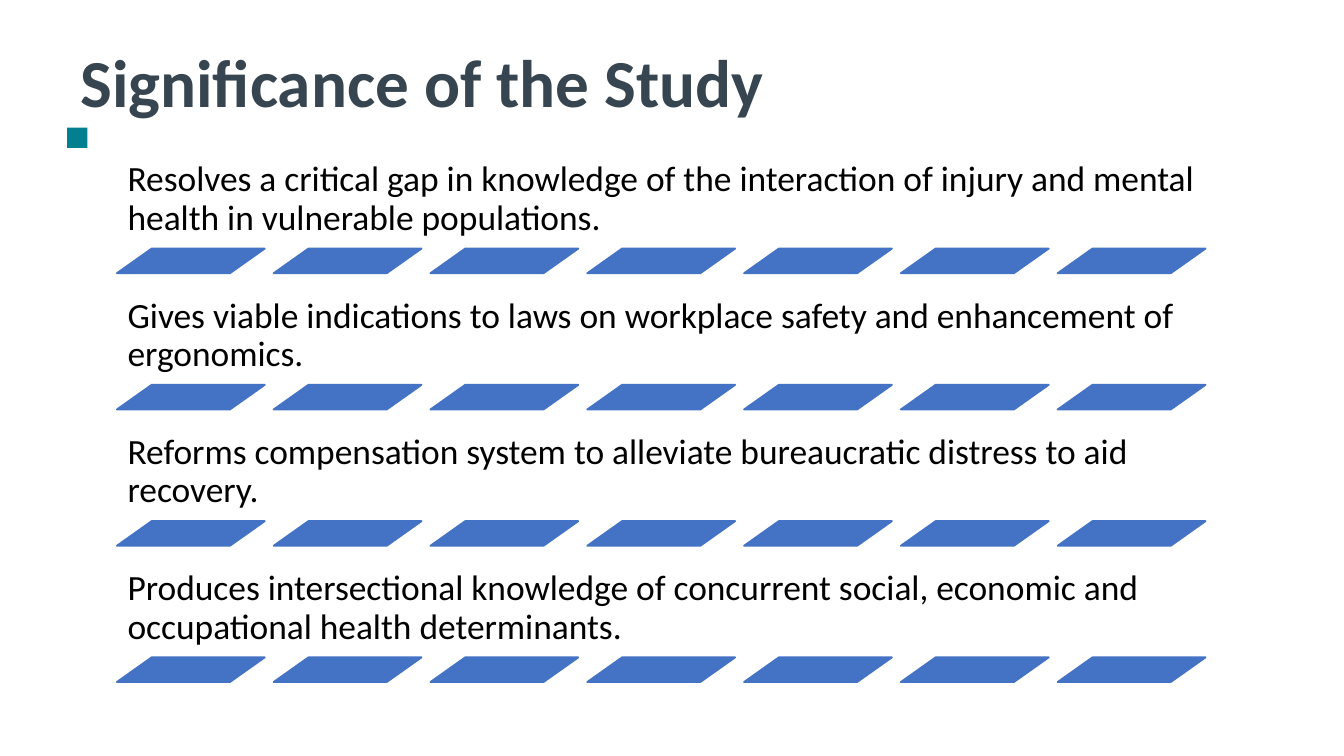
import pptx
import pptx.dml.color
import pptx.enum.shapes
import pptx.enum.text
import pptx.util

Pt = pptx.util.Pt
SHAPES = pptx.enum.shapes.MSO_SHAPE
ANCHORS = pptx.enum.text.MSO_ANCHOR

STATEMENTS = [
    "Resolves a critical gap in knowledge of the interaction of injury and mental health in vulnerable populations.",
    "Gives viable indications to laws on workplace safety and enhancement of ergonomics.",
    "Reforms compensation system to alleviate bureaucratic distress to aid recovery.",
    "Produces intersectional knowledge of concurrent social, economic and occupational health determinants.",
]
LIST_LEFT = 62.64
LIST_TOP = 79.1
LIST_WIDTH = 594.7
STATEMENT_HEIGHT = 54.1
ROW_PITCH = 73
BAR_COUNT = 7
BAR_PITCH = 84
BAR_WIDTH = 79.2
BAR_HEIGHT = 13.2


def color(hex_string):
    """Return the colour for a hex string."""
    return pptx.dml.color.RGBColor.from_string(hex_string)


def add_text(shapes, text, box, size, hex_string, anchor, inset=7.2, bold=False):
    """Add a wrapped one-paragraph text box and return its paragraph."""
    frame = shapes.add_textbox(*map(Pt, box)).text_frame
    frame.word_wrap = True
    frame.vertical_anchor = anchor
    frame.margin_left = frame.margin_right = Pt(inset)
    frame.margin_top = frame.margin_bottom = Pt(min(inset, 5.76))
    paragraph = frame.paragraphs[0]
    paragraph.text = text
    paragraph.font.name = "Calibri"
    paragraph.font.size = Pt(size)
    paragraph.font.bold = bold
    paragraph.font.color.rgb = color(hex_string)
    return paragraph


def add_block(shapes, kind, box, hex_string):
    """Add a flat filled shape without an outline."""
    shape = shapes.add_shape(kind, *map(Pt, box))
    shape.shadow.inherit = False
    shape.fill.solid()
    shape.fill.fore_color.rgb = color(hex_string)
    shape.line.fill.background()
    return shape


def add_bar_row(shapes, top):
    """Add one row of evenly spaced slanted bars."""
    for column in range(BAR_COUNT):
        box = (LIST_LEFT + column * BAR_PITCH, top, BAR_WIDTH, BAR_HEIGHT)
        bar = add_block(shapes, SHAPES.PARALLELOGRAM, box, "4472C4")
        bar.adjustments[0] = 1.41
        bar.line.color.rgb = color("4472C4")
        bar.line.width = Pt(1)


def add_statement(shapes, text, top):
    """Add one statement with its row of bars below."""
    box = (LIST_LEFT, top, LIST_WIDTH, STATEMENT_HEIGHT)
    paragraph = add_text(shapes, text, box, 19, "000000", ANCHORS.BOTTOM, inset=5.76)
    paragraph.line_spacing = 0.9
    add_bar_row(shapes, top + STATEMENT_HEIGHT)


def main():
    """Build and save the slide."""
    presentation = pptx.Presentation()
    presentation.slide_width = Pt(720)
    presentation.slide_height = Pt(405)
    slide = presentation.slides.add_slide(presentation.slide_layouts[6])
    add_text(slide.shapes, "Significance of the Study", (36, 21.6, 648, 43.2),
             36, "36454F", ANCHORS.MIDDLE, bold=True)
    add_block(slide.shapes, SHAPES.RECTANGLE, (36, 68.4, 10.8, 10.8), "028090")
    group = slide.shapes.add_group_shape()
    for row, statement in enumerate(STATEMENTS):
        add_statement(group.shapes, statement, LIST_TOP + row * ROW_PITCH)
    presentation.save("out.pptx")


if __name__ == "__main__":
    main()
